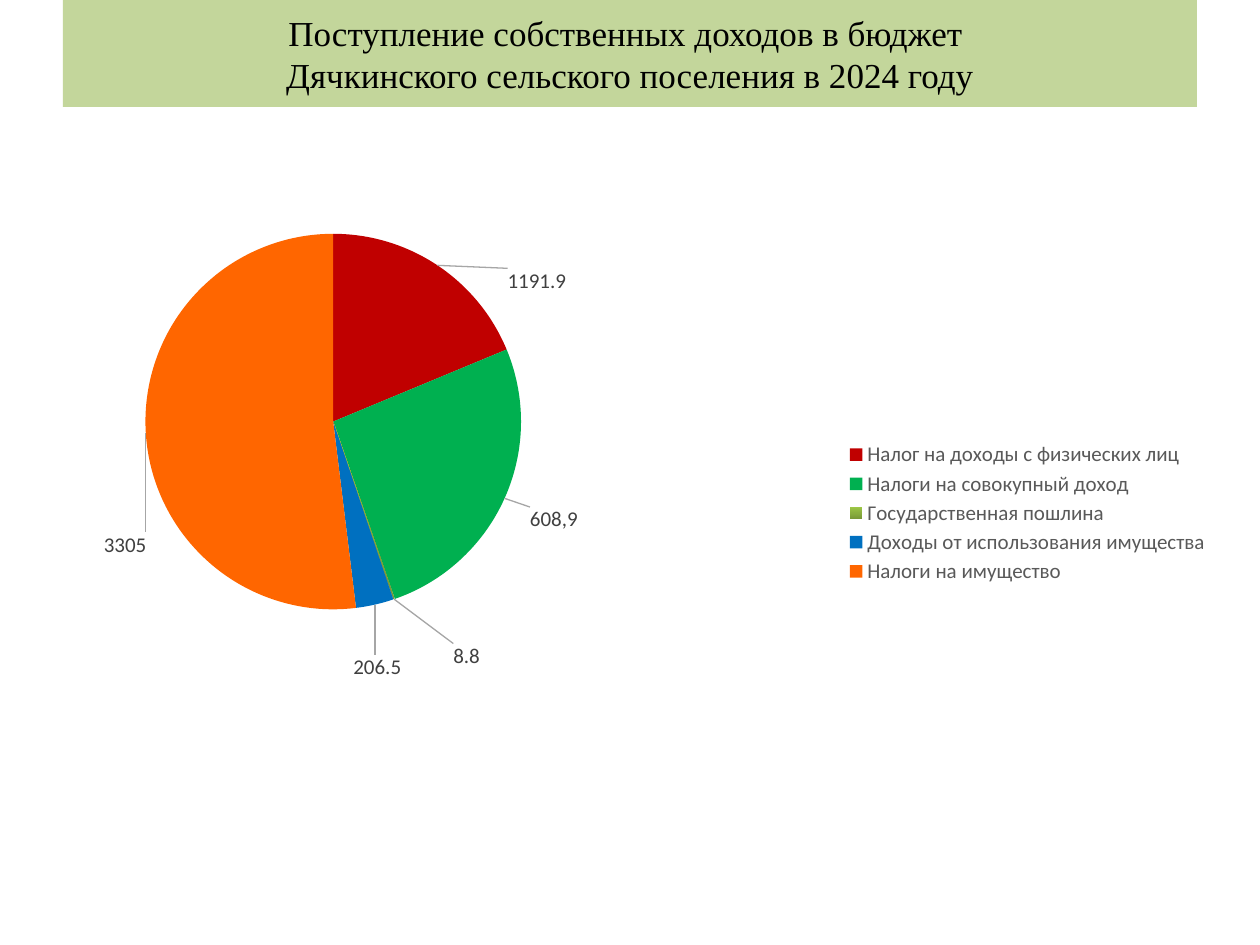
import pptx
import pptx.util
import pptx.chart.data
import pptx.dml.color
import pptx.enum.chart
import pptx.enum.shapes
import pptx.enum.text
import pptx.oxml
import pptx.oxml.ns

RGB = pptx.dml.color.RGBColor
Pt = pptx.util.Pt
BLACK = RGB(0, 0, 0)
BAND = RGB(0xC3, 0xD6, 0x9B)
GREY = RGB(0x59, 0x59, 0x59)
DARK = RGB(0x40, 0x40, 0x40)
RED = RGB(0xC0, 0, 0)
GREEN = RGB(0, 0xB0, 0x50)
OLIVE = RGB(0x77, 0x97, 0x37)
LIME = RGB(0x9D, 0xC7, 0x46)
BLUE = RGB(0, 0x70, 0xC0)
ORANGE = RGB(0xFF, 0x66, 0)

TITLE = "Поступление собственных доходов в бюджет \vДячкинского сельского поселения в 2024 году"
TAXES = [
    ("Налог на доходы с физических лиц", 1191.9, [RED], (66, 34), None),
    ("Налоги на совокупный доход", 1650.9, [GREEN], (19, 6), "608,9"),
    ("Государственная пошлина", 8.8, [OLIVE, LIME], (57, 37), None),
    ("Доходы от использования имущества", 206.5, [BLUE], (-23, 43), None),
    ("Налоги на имущество", 3305, [ORANGE], (8, 111), None),
]
HEAD = (63, 0, 1134, 107)
AREA = (63, 107, 1160, 813)
PIE = (145, 234, 376, 376)
KEY = (843, 438, 370, 150)
TEXT = {"name": "Calibri", "size": Pt(12), "bold": False}
FONTS = {
    "title": {"name": "Times New Roman", "size": Pt(20), "color": BLACK},
    "chart": TEXT | {"size": Pt(10), "color": BLACK},
    "key": TEXT | {"color": GREY},
    "label": TEXT | {"color": DARK},
}


def px(n):
    return pptx.util.Emu(n * 7257)


def style(font, form):
    for key, val in form.items():
        if key == "color":
            font.color.rgb = val
        else:
            setattr(font, key, val)


def parts(box):
    left, top, wide, high = AREA
    x, y, w, h = box
    return (x - left) / wide, (y - top) / high, w / wide, h / high


def xml(text):
    names = pptx.oxml.ns.nsdecls("c", "a")
    return pptx.oxml.parse_xml(text.replace(">", f" {names}>", 1))


def layout(vals, modes=()):
    tags = [f'<c:{tag} val="{val}"/>' for tag, val in modes]
    tags += [f'<c:{tag} val="{val:.3f}"/>' for tag, val in zip("xywh", vals)]
    body = "".join(tags)
    return xml(f"<c:layout><c:manualLayout>{body}</c:manualLayout></c:layout>")


def place(node, item):
    for old in node.findall(pptx.oxml.ns.qn("c:layout")):
        node.remove(old)
    node.insert(1 if node.tag.endswith(("legend", "dLbl")) else 0, item)


def draw_title(slide):
    band = slide.shapes.add_shape(pptx.enum.shapes.MSO_SHAPE.RECTANGLE, *map(px, HEAD))
    band.shadow.inherit = False
    band.fill.solid()
    band.fill.fore_color.rgb = BAND
    band.line.fill.background()
    frame = band.text_frame
    frame.word_wrap = True
    frame.vertical_anchor = pptx.enum.text.MSO_ANCHOR.MIDDLE
    frame.text = TITLE
    para = frame.paragraphs[0]
    para.alignment = pptx.enum.text.PP_ALIGN.CENTER
    for run in para.runs:
        style(run.font, FONTS["title"])


def paint(fill, tones):
    if len(tones) == 1:
        fill.solid()
        fill.fore_color.rgb = tones[0]
        return
    fill.gradient()
    fill.gradient_angle = 90
    for stop, tone in zip(fill.gradient_stops, tones):
        stop.color.rgb = tone


def draw_pie(slide):
    data = pptx.chart.data.CategoryChartData()
    data.categories = [tax[0] for tax in TAXES]
    data.add_series("Series 1", [tax[1] for tax in TAXES])
    kind = pptx.enum.chart.XL_CHART_TYPE.PIE
    chart = slide.shapes.add_chart(kind, *map(px, AREA), data).chart
    chart.has_title = False
    chart.has_legend = True
    chart.legend.position = pptx.enum.chart.XL_LEGEND_POSITION.RIGHT
    chart.legend.include_in_layout = False
    style(chart.font, FONTS["chart"])
    style(chart.legend.font, FONTS["key"])

    plot = chart.plots[0]
    plot.vary_by_categories = True
    row = plot.series[0]
    spot = pptx.enum.chart.XL_LABEL_POSITION.OUTSIDE_END
    labels = row.data_labels
    labels.show_value = True
    labels.position = spot
    style(labels.font, FONTS["label"])
    for n, (_, _, tones, _, note) in enumerate(TAXES):
        point = row.points[n]
        paint(point.format.fill, tones)
        label = point.data_label
        label.position = spot
        if note:
            label.text_frame.text = note
            style(label.text_frame.paragraphs[0].runs[0].font, FONTS["label"])
        else:
            style(label.font, FONTS["label"])

    root = chart.element
    for node, tax in zip(root.xpath(".//c:dLbl"), TAXES):
        x, y = tax[3]
        place(node, layout((x / AREA[2], y / AREA[3])))
    edge = [("xMode", "edge"), ("yMode", "edge")]
    place(root.xpath(".//c:plotArea")[0], layout(parts(PIE), [("layoutTarget", "inner")] + edge))
    place(root.xpath(".//c:legend")[0], layout(parts(KEY), edge))
    group = root.xpath(".//c:dLbls")[0]
    for old in group.findall(pptx.oxml.ns.qn("c:showLeaderLines")):
        group.remove(old)
    group.append(xml('<c:showLeaderLines val="1"></c:showLeaderLines>'))
    group.append(xml(
        '<c:leaderLines><c:spPr><a:ln w="9525"><a:solidFill><a:srgbClr val="A6A6A6"/>'
        '</a:solidFill></a:ln></c:spPr></c:leaderLines>'))


def main():
    deck = pptx.Presentation()
    deck.slide_width, deck.slide_height = px(1260), px(945)
    slide = deck.slides.add_slide(deck.slide_layouts[6])
    draw_title(slide)
    draw_pie(slide)
    deck.save("out.pptx")


if __name__ == "__main__":
    main()
